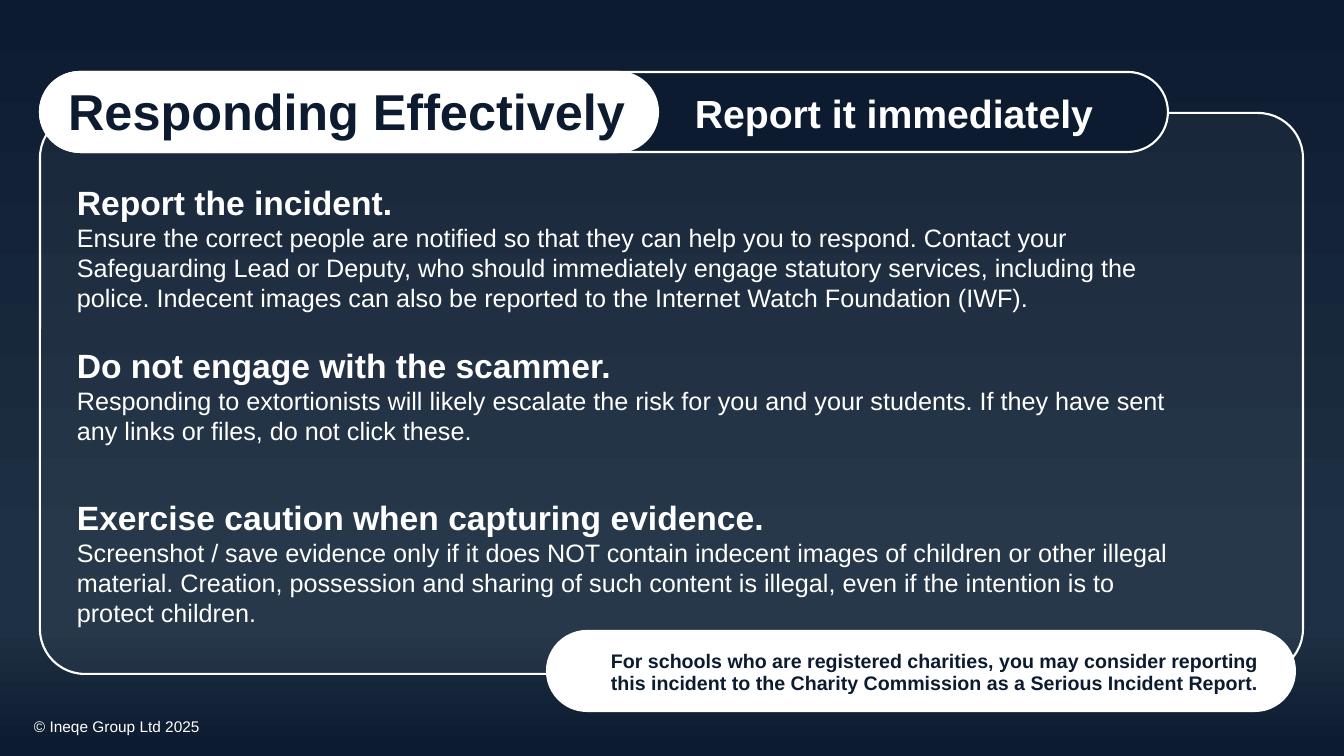
from lxml import etree
from pptx import Presentation
from pptx import util as u
from pptx.dml.color import RGBColor
from pptx.enum import shapes, text
from pptx.oxml import ns

PX = 12192000 / 1344
NAVY = RGBColor(0x0D, 0x1B, 0x30)
SLATE = RGBColor(0x1E, 0x30, 0x43)
WHITE = RGBColor(0xFF, 0xFF, 0xFF)


def add_pill(box, fill, radius=0.5):
    sp = s.shapes.add_shape(shapes.MSO_SHAPE.ROUNDED_RECTANGLE, *[round(v * PX) for v in box])
    sp.adjustments[0] = radius
    sp.shadow.inherit = False
    sp.fill.solid()
    sp.fill.fore_color.rgb = fill
    sp.line.color.rgb = WHITE
    sp.line.width = u.Pt(1.5)
    return sp


def write_text(sp, box, paragraphs, color):
    sp.left, sp.top, sp.width, sp.height = [round(v * PX) for v in box]
    tf = sp.text_frame
    tf.word_wrap = True
    tf.auto_size = text.MSO_AUTO_SIZE.NONE
    tf.vertical_anchor = text.MSO_ANCHOR.TOP
    for i, (words, size, bold, spacing, before) in enumerate(paragraphs):
        p = tf.add_paragraph() if i else tf.paragraphs[0]
        p.alignment = text.PP_ALIGN.LEFT
        p.line_spacing = spacing
        p.space_before = u.Pt(before)
        r = p.add_run()
        r.text = words
        r.font.name = "Arial"
        r.font.size = u.Pt(size)
        r.font.bold = bold
        r.font.color.rgb = color


prs = Presentation()
prs.slide_width = round(1344 * PX)
prs.slide_height = round(756 * PX)
s = prs.slides.add_slide(prs.slide_layouts[5])

bg = s.background.fill
bg.gradient()
bg.gradient_angle = 270
stops = s.background._cSld.find(".//" + ns.qn("a:gsLst"))
for stop in list(stops):
    stops.remove(stop)
for percent, color in [(0, NAVY), (74, SLATE), (83, SLATE), (99, NAVY)]:
    stop = etree.SubElement(stops, ns.qn("a:gs"), pos=str(percent * 1000))
    etree.SubElement(stop, ns.qn("a:srgbClr"), val=str(color))

panel = add_pill((40, 113, 1263, 561), WHITE, 0.08)
panel_color = panel.fill._xPr.find(ns.qn("a:solidFill"))[0]
etree.SubElement(panel_color, ns.qn("a:alpha"), val="4000")

add_pill((40, 72, 1128, 80), NAVY)
add_pill((40, 72, 618, 80), WHITE)
title = s.shapes.title
s.shapes._spTree.append(title._element)
write_text(title, (58, 82, 600, 105), [("Responding Effectively", 36, True, 0.9, 0)], NAVY)

add_pill((547, 631, 748, 80), WHITE)

advice = [
    ("Report the incident.", 24, True, 1, 0),
    ("Ensure the correct people are notified so that they can help you to respond. Contact your "
     "Safeguarding Lead or Deputy, who should immediately engage statutory services, including the "
     "police. Indecent images can also be reported to the Internet Watch Foundation (IWF).",
     18, False, 1, 0),
    ("Do not engage with the scammer.", 24, True, 1, 23),
    ("Responding to extortionists will likely escalate the risk for you and your students. "
     "If they have sent any links or files, do not click these.", 18, False, 1, 0),
    ("Exercise caution when capturing evidence.", 24, True, 0.8, 42),
    ("Screenshot / save evidence only if it does NOT contain indecent images of children or other "
     "illegal material. Creation, possession and sharing of such content is illegal, even if the "
     "intention is to protect children.", 18, False, 1, 0),
]
note = ("For schools who are registered charities, you may consider reporting this incident "
        "to the Charity Commission as a Serious Incident Report.")

for box, paragraphs, color in [
    ((685, 84, 423, 57), [("Report it immediately", 28, True, 1, 0)], WHITE),
    ((67, 177, 1140, 497), advice, WHITE),
    ((601, 647, 677, 74), [(note, 14, True, 0.9, 0)], NAVY),
    ((24, 712, 397, 29), [("© Ineqe Group Ltd 2025", 11, False, 1, 0)], WHITE),
]:
    write_text(s.shapes.add_textbox(0, 0, 0, 0), box, paragraphs, color)

prs.save("out.pptx")
